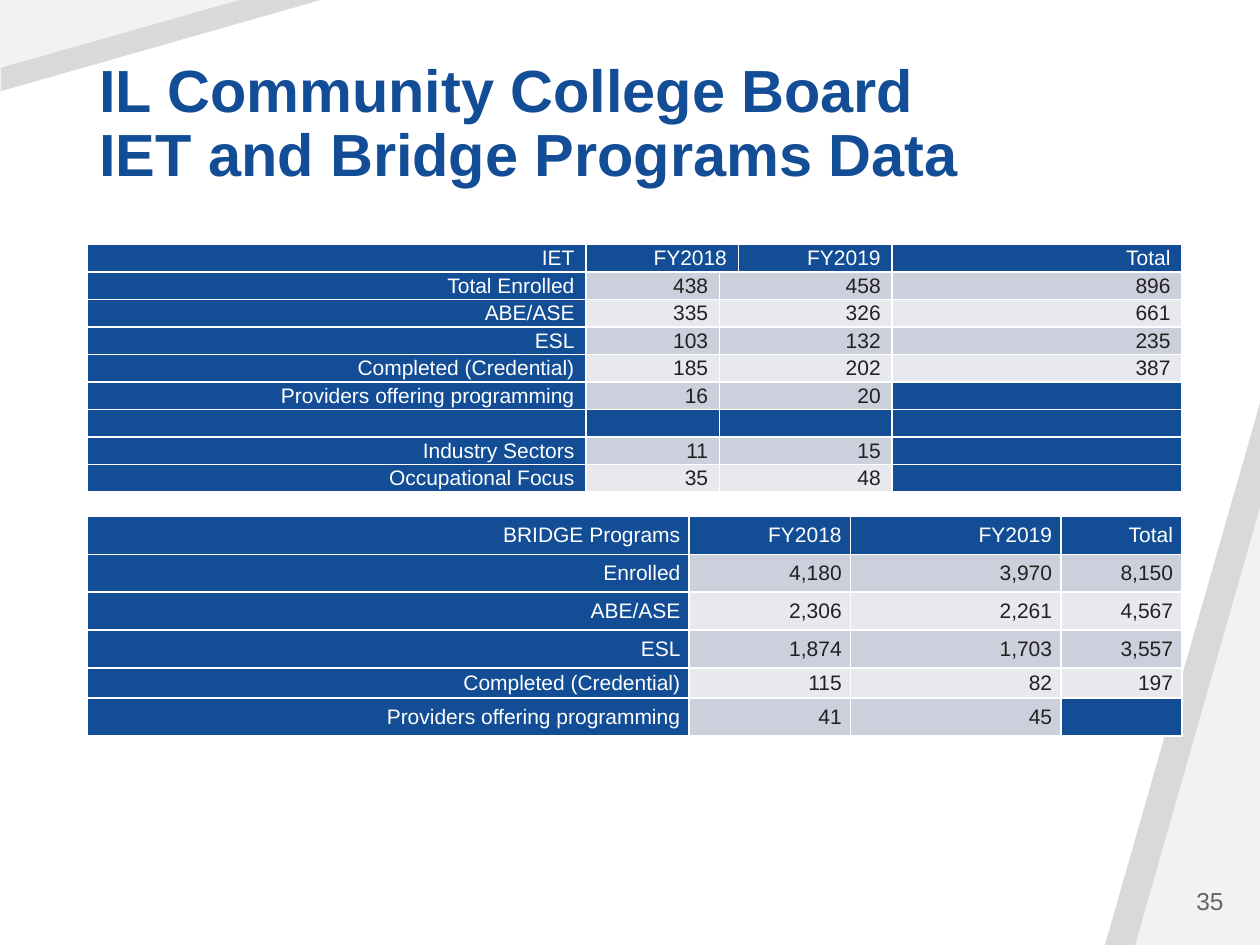
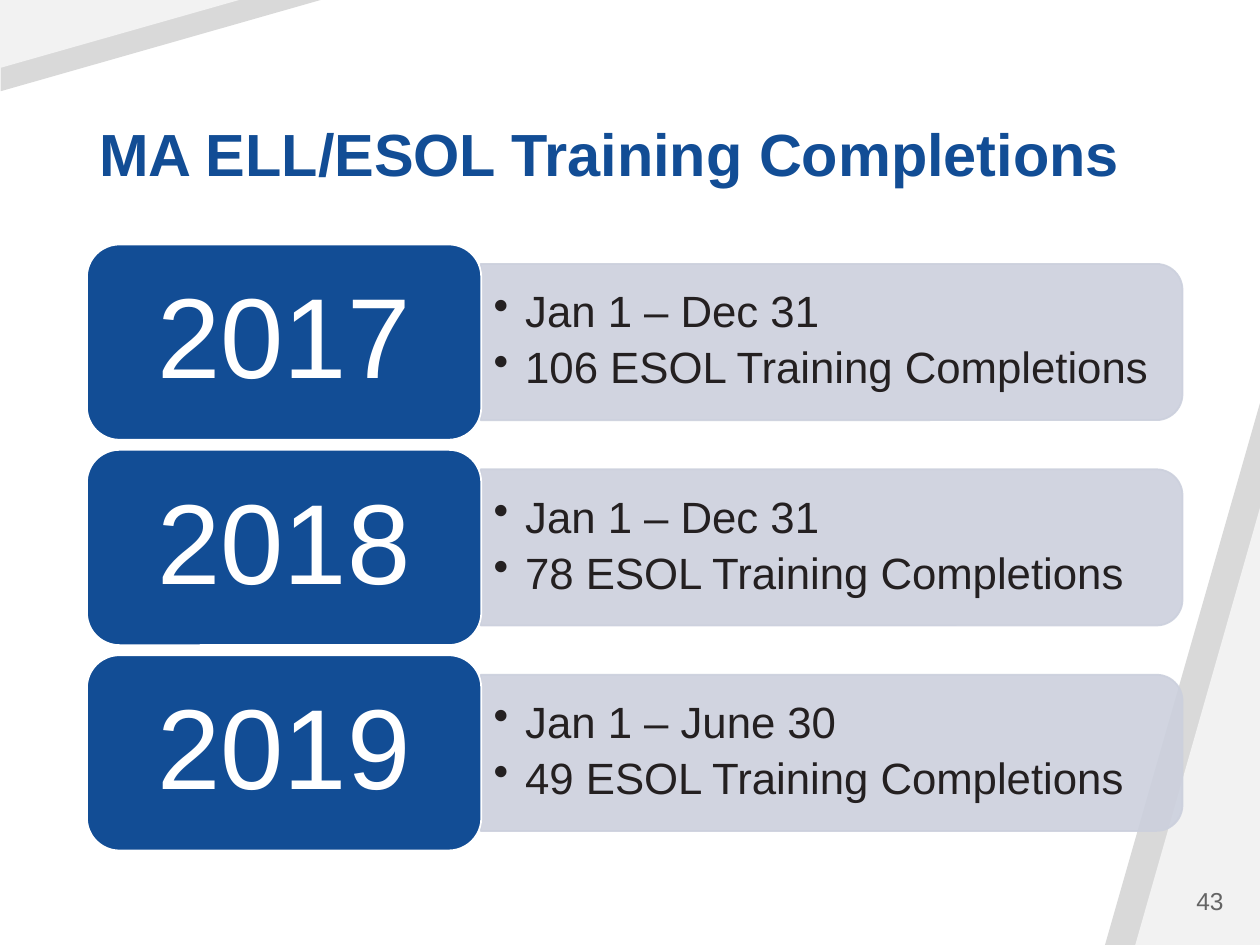
from pptx import Presentation
from pptx.dml.color import RGBColor
from pptx.enum.shapes import MSO_SHAPE
from pptx.enum.text import MSO_ANCHOR, PP_ALIGN
from pptx.oxml.ns import qn
from pptx.util import Inches, Pt
from lxml import etree

TRI = MSO_SHAPE.ISOSCELES_TRIANGLE
ROUND = MSO_SHAPE.ROUNDED_RECTANGLE
TAB = MSO_SHAPE.ROUND_2_SAME_RECTANGLE
MID, LOW = MSO_ANCHOR.MIDDLE, MSO_ANCHOR.BOTTOM
LEFT, MIDDLE, RIGHT = PP_ALIGN.LEFT, PP_ALIGN.CENTER, PP_ALIGN.RIGHT

BLUE, WHITE, INK, GREY = "124D95", "FFFFFF", "242021", "646464"
BANDS = ["E7E9EF", "CCD0DD"]
FONT = "Arial"


def paint(form, color, alpha=None):
    """Give a fill, or a line's fill, a solid colour, alpha in percent."""
    form.solid()
    form.fore_color.rgb = RGBColor.from_string(color)
    if alpha:
        for node in form._xPr.iter(qn("a:srgbClr")):
            if node.find(qn("a:alpha")) is None:
                etree.SubElement(node, qn("a:alpha"), val=str(alpha * 1000))


def style(para, size, color, align=LEFT, bold=False):
    para.alignment = align
    para.font.name = FONT
    para.font.size = Pt(size)
    para.font.bold = bold
    para.font.color.rgb = RGBColor.from_string(color)


deck = Presentation()
deck.slide_width, deck.slide_height = Inches(10), Inches(7.5)

# Corner bands, title and page number on every slide
CORNERS = [  # left, top, width, height, turn, colour
    (8.77, 3.2, 1.23, 4.3, 0, "D9D9D9"),
    (9.01, 4.03, 0.99, 3.47, 0, "F2F2F2"),
    (0.92, -0.92, 0.73, 2.56, 270, "D9D9D9"),
    (0.68, -0.68, 0.54, 1.9, 270, "F2F2F2"),
]
PAGES = [
    ("IL Community College Board\vIET and Bridge Programs Data", "35"),
    ("MA ELL/ESOL Training Completions", "43"),
]
slides = []
for title, number in PAGES:
    slide = deck.slides.add_slide(deck.slide_layouts[6])
    slides.append(slide)
    for *place, turn, color in CORNERS:
        band = slide.shapes.add_shape(TRI, *map(Inches, place))
        band.adjustments[0] = 1
        band.shadow.inherit = False
        paint(band.fill, color)
        band.line.fill.background()
        if turn:
            band.rotation = turn
            band._element.spPr.find(qn("a:xfrm")).set("flipV", "1")
    for text, place, anchor, look in [
        (title, (0.69, 0.4, 8.7, 1.15), LOW, (34, BLUE, LEFT, True)),
        (number, (8.41, 6.95, 1.4, 0.4), MID, (14, GREY, RIGHT)),
    ]:
        frame = slide.shapes.add_textbox(*map(Inches, place)).text_frame
        frame.word_wrap = True
        frame.vertical_anchor = anchor
        para = frame.paragraphs[0]
        para.text = text
        para.line_spacing = 0.9 if text == title else 1.0
        style(para, *look)

# Slide 1: two data tables
IET = [
    ["IET", "FY2018", "", "FY2019", "Total"],
    ["Total Enrolled", "438", "458", "", "896"],
    ["ABE/ASE", "335", "326", "", "661"],
    ["ESL", "103", "132", "", "235"],
    ["Completed (Credential)", "185", "202", "", "387"],
    ["Providers offering programming", "16", "20", "", ""],
    ["", "", "", "", ""],
    ["Industry Sectors", "11", "15", "", ""],
    ["Occupational Focus", "35", "48", "", ""],
]
BRIDGE = [
    ["BRIDGE Programs", "FY2018", "FY2019", "Total"],
    ["Enrolled", "4,180", "3,970", "8,150"],
    ["ABE/ASE", "2,306", "2,261", "4,567"],
    ["ESL", "1,874", "1,703", "3,557"],
    ["Completed (Credential)", "115", "82", "197"],
    ["Providers offering programming", "41", "45", ""],
]
TABLES = [  # data, top, column widths, row heights, side margin
    (IET, 1.94, [3.96, 1.06, 0.15, 1.22, 2.3], [1.97 / 9] * 9, 0.09),
    (BRIDGE, 4.1, [4.78, 1.28, 1.67, 0.96], [0.3] * 4 + [0.24, 0.3], 0.07),
]
for data, top, widths, heights, pad in TABLES:
    table = slides[0].shapes.add_table(
        len(data), len(widths), Inches(0.69), Inches(top),
        Inches(sum(widths)), Inches(sum(heights))).table
    table.first_row = table.horz_banding = False
    for col, width in zip(table.columns, widths):
        col.width = Inches(width)
    for row, height in zip(table.rows, heights):
        row.height = Inches(height)
    for i, line in enumerate(data):
        for j, text in enumerate(line):
            cell = table.cell(i, j)
            cell.margin_left = cell.margin_right = Inches(pad)
            cell.margin_top = cell.margin_bottom = 0
            cell.vertical_anchor = MID
            para = cell.text_frame.paragraphs[0]
            para.text = text
            head = i == 0 or j == 0
            style(para, 12, WHITE if head else INK, RIGHT)
            if not text:
                para._p.get_or_add_endParaRPr().set("sz", "1200")
            props = cell._tc.get_or_add_tcPr()
            for side in ("a:lnL", "a:lnR", "a:lnT", "a:lnB"):
                edge = etree.SubElement(props, qn(side), w=str(Pt(1)))
                solid = etree.SubElement(edge, qn("a:solidFill"))
                etree.SubElement(solid, qn("a:srgbClr"), val=WHITE)
            paint(cell.fill, BLUE if head or not text else BANDS[i % 2])
        if data is IET:
            start = 1 if i == 0 else 2
            table.cell(i, start).merge(table.cell(i, start + 1))

# Slide 2: one row of year and facts per year
YEARS = [
    ("2017", "Jan 1 – Dec 31", "106 ESOL Training Completions"),
    ("2018", "Jan 1 – Dec 31", "78 ESOL Training Completions"),
    ("2019", "Jan 1 – June 30", "49 ESOL Training Completions"),
]
STEP = 1.63
shapes = slides[1].shapes
for i, (year, *facts) in enumerate(YEARS):
    drop = i * STEP
    bar = shapes.add_shape(TAB, Inches(5.98), Inches(drop - 0.07),
                           Inches(1.24), Inches(5.57))
    bar.rotation = 90
    bar.shadow.inherit = False
    bar.line.width = Pt(1)
    paint(bar.fill, BANDS[1], 90)
    paint(bar.line.fill, BANDS[1], 90)

    frame = shapes.add_textbox(Inches(3.82), Inches(2.15 + drop),
                               Inches(5.51), Inches(1.12)).text_frame
    frame.word_wrap = True
    frame.vertical_anchor = MID
    for k, fact in enumerate(facts):
        para = frame.add_paragraph() if k else frame.paragraphs[0]
        para.text = fact
        props = para._p.get_or_add_pPr()
        props.set("marL", str(Inches(0.25)))
        props.set("indent", str(-Inches(0.25)))
        etree.SubElement(props, qn("a:buChar"), char="•")
        para.line_spacing = 0.9
        para.space_after = Pt(5)
        style(para, 25, INK)

    box = shapes.add_shape(ROUND, Inches(0.69), Inches(1.94 + drop),
                           Inches(3.13), Inches(1.55))
    box.shadow.inherit = False
    box.line.width = Pt(1)
    paint(box.fill, BLUE)
    paint(box.line.fill, WHITE)
    box.text_frame.vertical_anchor = MID
    para = box.text_frame.paragraphs[0]
    para.text = year
    para.line_spacing = 0.9
    style(para, 65, WHITE, MIDDLE)

deck.save("out.pptx")
